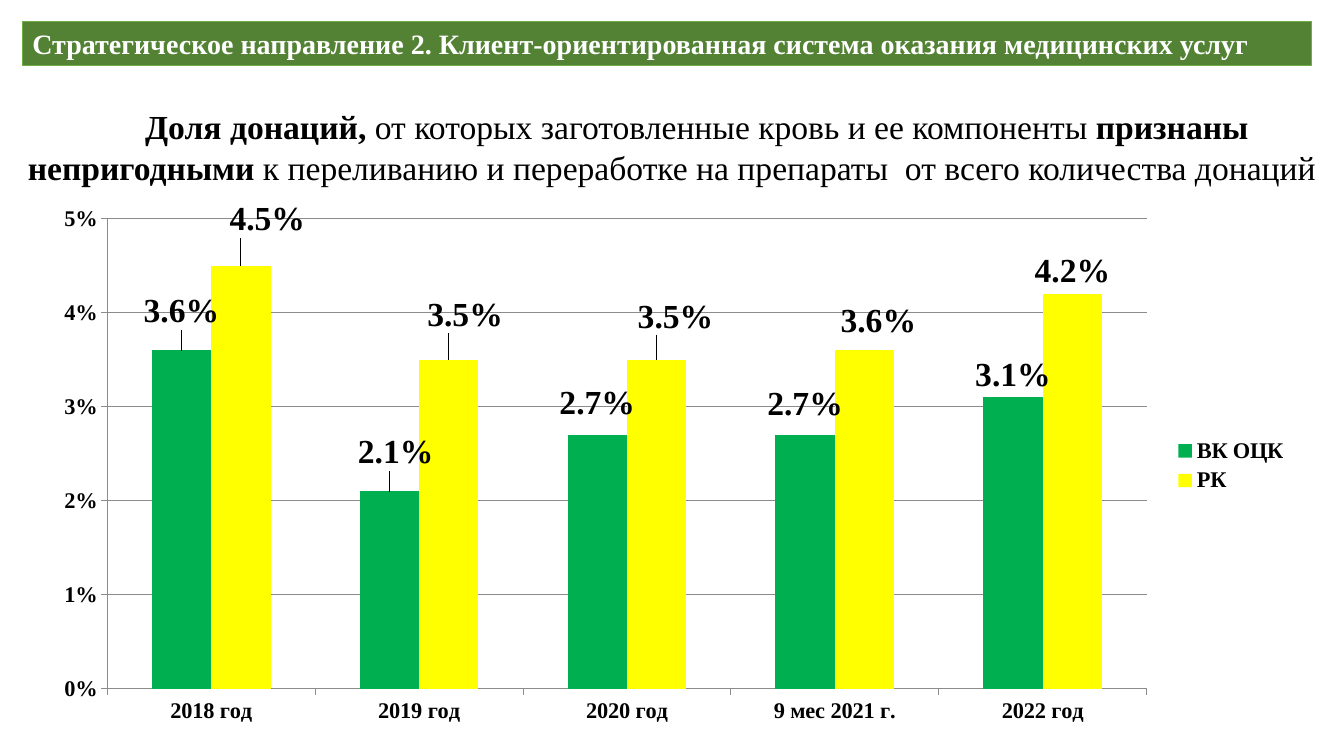
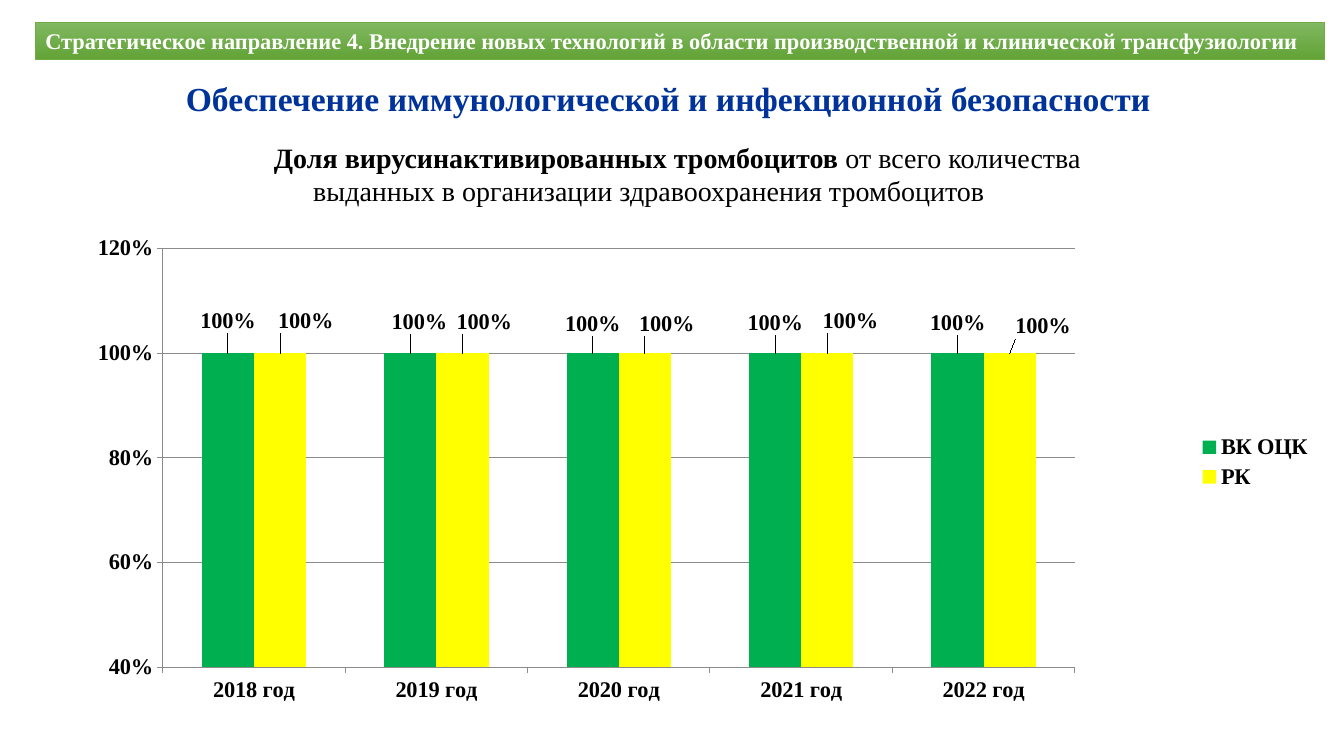
from copy import deepcopy

from pptx import Presentation
from pptx.chart.data import CategoryChartData
from pptx.dml.color import RGBColor
from pptx.enum import chart as ch, text
from pptx.oxml import parse_xml
from pptx.util import Cm, Pt

FONT = "Times New Roman"
COLORS = {
    "text": "000000", "white": "FFFFFF", "heading": "003399",
    "band": "548235", "band_top": "81B861", "band_bottom": "62A336",
    "band_line": "70AD47", "axis": "8B8B8B",
    "ВК ОЦК": "00B050", "РК": "FFFF00",
}
CHART_NS = "http://schemas.openxmlformats.org/drawingml/2006/chart"

# Boxes are left, top, width, height in cm. Plot areas and label shifts
# are percentages of the chart's width and height.
SLIDES = [
    {
        "band": {
            "text": "Стратегическое направление 2. Клиент-ориентированная "
                    "система оказания медицинских услуг",
            "box": (0.56, 0.53, 32.49, 1.12), "size": 20, "fill": ["band"],
        },
        "subtitle": {
            "runs": [
                ("Доля донаций, ", True),
                ("от которых заготовленные кровь и ее компоненты ", False),
                ("признаны непригодными ", True),
                ("к переливанию и переработке на препараты  от всего "
                 "количества донаций", False),
            ],
            "box": (0, 2.54, 33.87, 2.31), "size": 24,
        },
        "chart": {
            "box": (0.99, 4.93, 31.75, 13.61), "plot": (5.4, 4.3, 82.5, 87),
            "scale": (0, 0.05, 0.01), "label_size": 24, "label_format": "0.0%",
            "categories": ["2018 год", "2019 год", "2020 год",
                           "9 мес 2021 г.", "2022 год"],
            "values": {"ВК ОЦК": [3.6, 2.1, 2.7, 2.7, 3.1],
                       "РК": [4.5, 3.5, 3.5, 3.6, 4.2]},
            "shifts": {"ВК ОЦК": [(0, -3), (0.5, -3), (0, -1.7), (0, -1.5)],
                       "РК": [(2.1, -4.4), (1.3, -4.1), (1.5, -3.7), (1.1, -1.3)]},
        },
    },
    {
        "band": {
            "text": "Стратегическое направление 4. Внедрение новых технологий "
                    "в области производственной и клинической трансфузиологии",
            "box": (0.89, 0.56, 32.49, 0.94), "size": 16,
            "fill": ["band_top", "band_bottom"],
        },
        "heading": {
            "runs": [("Обеспечение иммунологической и инфекционной "
                      "безопасности", True)],
            "box": (3.86, 1.83, 25.96, 1.3), "size": 24, "color": "heading",
            "indent": 0, "anchor": text.MSO_ANCHOR.TOP,
        },
        "subtitle": {
            "runs": [
                ("Доля вирусинактивированных тромбоцитов ", True),
                ("от всего количества выданных в организации "
                 "здравоохранения тромбоцитов ", False),
            ],
            "box": (4.14, 3.4, 24.61, 1.96), "size": 20,
        },
        "chart": {
            "box": (1.07, 4.95, 32.28, 13.39), "plot": (9.4, 9.8, 71.2, 78.8),
            "scale": (0.4, 1.2, 0.2), "label_size": 16, "label_format": "0%",
            "categories": [f"{year} год" for year in range(2018, 2023)],
            "values": {"ВК ОЦК": [100] * 5, "РК": [100] * 5},
            "shifts": {"ВК ОЦК": [(0, -3), (0.7, -2.8), (0, -2.4),
                                  (0, -2.6), (0, -2.6)],
                       "РК": [(2, -3), (1.7, -2.8), (1.7, -2.4),
                              (1.8, -3), (2.6, -1.9)]},
        },
    },
]


def rgb(name):
    return RGBColor.from_string(COLORS[name])


def cm_box(box):
    return [Cm(v) for v in box]


def style_font(font, size, color="text", bold=True):
    font.name, font.size, font.bold = FONT, Pt(size), bold
    font.color.rgb = rgb(color)


def add_run(p, words, size, color="text", bold=True):
    r = p.add_run()
    r.text = words
    style_font(r.font, size, color, bold)


def fill_band(s, band):
    """Turn the title placeholder into the coloured band."""
    sp = s.shapes.title
    sp.left, sp.top, sp.width, sp.height = cm_box(band["box"])
    if len(band["fill"]) == 1:
        sp.fill.solid()
        sp.fill.fore_color.rgb = rgb(band["fill"][0])
    else:
        sp.fill.gradient()
        sp.fill.gradient_angle = 270
        for stop, name in zip(sp.fill.gradient_stops, band["fill"]):
            stop.color.rgb = rgb(name)
    sp.line.color.rgb = rgb("band_line")
    sp.line.width = Pt(0.5)
    tf = sp.text_frame
    tf.word_wrap = True
    tf.auto_size = text.MSO_AUTO_SIZE.NONE
    tf.vertical_anchor = text.MSO_ANCHOR.MIDDLE
    p = tf.paragraphs[0]
    p.alignment = text.PP_ALIGN.LEFT
    add_run(p, band["text"], band["size"], "white")


def add_text(s, runs, box, size, color="text", indent=1.25,
             anchor=text.MSO_ANCHOR.MIDDLE):
    tf = s.shapes.add_textbox(*cm_box(box)).text_frame
    tf.word_wrap = True
    tf.vertical_anchor = anchor
    p = tf.paragraphs[0]
    p.alignment = text.PP_ALIGN.CENTER
    p._p.get_or_add_pPr().set("indent", str(Cm(indent)))
    for words, bold in runs:
        add_run(p, words, size, color, bold)


def manual_layout(x, y, extra=""):
    return (f'<c:layout xmlns:c="{CHART_NS}"><c:manualLayout>{extra}'
            f'<c:x val="{x / 100:.3f}"/><c:y val="{y / 100:.3f}"/>'
            "</c:manualLayout></c:layout>")


def place_plot(chart, plot):
    x, y, w, h = plot
    layout = parse_xml(manual_layout(
        x, y, '<c:layoutTarget val="inner"/>'
              '<c:xMode val="edge"/><c:yMode val="edge"/>'))
    for tag, value in (("w", w), ("h", h)):
        layout[0].append(parse_xml(
            f'<c:{tag} xmlns:c="{CHART_NS}" val="{value / 100:.3f}"/>'))
    area = chart._chartSpace.chart.plotArea
    for old in area.findall(f"{{{CHART_NS}}}layout"):
        area.remove(old)
    area.insert(0, layout)


def add_labels(series, size, number_format, shifts):
    labels = series.data_labels
    labels.show_value = True
    labels.number_format = number_format
    labels.number_format_is_linked = False
    labels.position = ch.XL_LABEL_POSITION.OUTSIDE_END
    style_font(labels.font, size)
    root = labels._element
    shared = [c for c in root if not c.tag.endswith("showLeaderLines")]
    for i, shift in enumerate(shifts):
        label = parse_xml(f'<c:dLbl xmlns:c="{CHART_NS}"><c:idx val="{i}"/>'
                          f"{manual_layout(*shift)}</c:dLbl>")
        label.extend(deepcopy(shared))
        root.insert(i, label)


def style_axis(axis):
    style_font(axis.tick_labels.font, 16)
    axis.major_tick_mark = ch.XL_TICK_MARK.OUTSIDE
    axis.minor_tick_mark = ch.XL_TICK_MARK.NONE
    axis.format.line.color.rgb = rgb("axis")


def add_column_chart(s, content):
    data = CategoryChartData(number_format=content["label_format"])
    data.categories = content["categories"]
    for name, percents in content["values"].items():
        data.add_series(name, [round(v / 100, 3) for v in percents])
    chart = s.shapes.add_chart(ch.XL_CHART_TYPE.COLUMN_CLUSTERED,
                               *cm_box(content["box"]), data).chart
    chart.has_title = False
    style_font(chart.font, 16)
    place_plot(chart, content["plot"])

    plot = chart.plots[0]
    plot.vary_by_categories = False
    plot.gap_width, plot.overlap = 150, 0
    for series in plot.series:
        series.format.fill.solid()
        series.format.fill.fore_color.rgb = rgb(series.name)
        add_labels(series, content["label_size"], content["label_format"],
                   content["shifts"][series.name])

    style_axis(chart.category_axis)
    axis = chart.value_axis
    style_axis(axis)
    axis.minimum_scale, axis.maximum_scale, axis.major_unit = content["scale"]
    axis.tick_labels.number_format = "0%"
    axis.tick_labels.number_format_is_linked = False
    axis.has_major_gridlines = True
    axis.major_gridlines.format.line.color.rgb = rgb("axis")

    chart.has_legend = True
    chart.legend.position = ch.XL_LEGEND_POSITION.RIGHT
    chart.legend.include_in_layout = False
    style_font(chart.legend.font, 16)


def main():
    prs = Presentation()
    prs.slide_width, prs.slide_height = Cm(33.87), Cm(19.05)
    for content in SLIDES:
        s = prs.slides.add_slide(prs.slide_layouts.get_by_name("Title Only"))
        fill_band(s, content["band"])
        add_column_chart(s, content["chart"])
        for part in ("heading", "subtitle"):
            if part in content:
                add_text(s, **content[part])
    prs.save("out.pptx")


if __name__ == "__main__":
    main()
